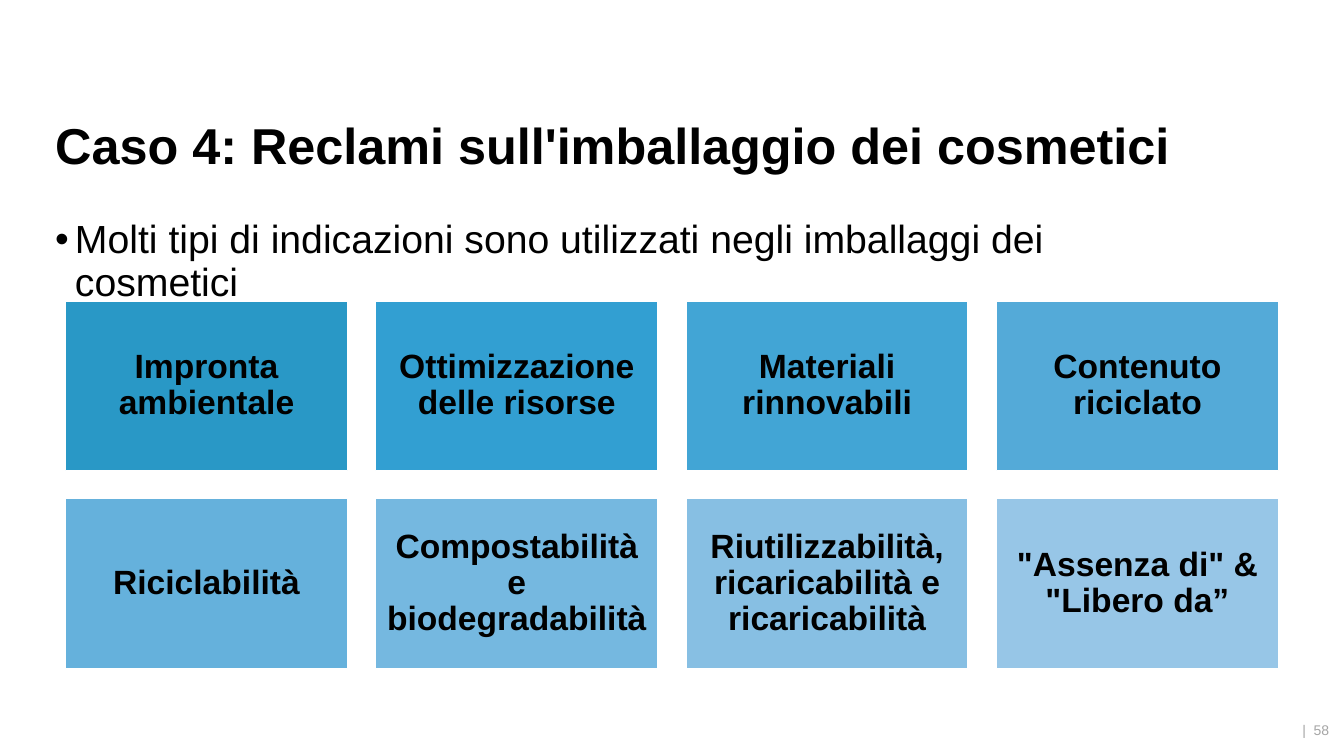
from typing import NamedTuple

from lxml.etree import SubElement
from pptx import Presentation
from pptx.dml.color import RGBColor as Rgb
from pptx.enum.shapes import MSO_SHAPE as Form
from pptx.enum.text import MSO_ANCHOR as Anchor, MSO_AUTO_SIZE as Fit, PP_ALIGN as Align
from pptx.oxml.ns import qn
from pptx.util import Cm, Pt

HUES = {
    "ink": "000000",
    "edge": "FFFFFF",
    "page": "A5A5A5",
    "foot": "2998C6",
    "save": "329FD2",
    "renew": "42A5D5",
    "reuse": "54AAD8",
    "cycle": "65B1DC",
    "rot": "75B8E0",
    "refill": "87BFE3",
    "free": "97C6E7",
}


class Claim(NamedTuple):
    text: str
    hue: str


CLAIMS = [
    Claim("Impronta ambientale", "foot"),
    Claim("Ottimizzazione delle risorse", "save"),
    Claim("Materiali rinnovabili", "renew"),
    Claim("Contenuto riciclato", "reuse"),
    Claim("Riciclabilità", "cycle"),
    Claim("Compostabilità e biodegradabilità", "rot"),
    Claim("Riutilizzabilità, ricaricabilità e ricaricabilità", "refill"),
    Claim("\"Assenza di\" & \"Libero da”", "free"),
]
COLS = 4
LEFT, TOP = 1.65, 7.59
WIDE, HIGH, GAP = 7.11, 4.27, 0.71


def tint(name: str) -> Rgb:
    return Rgb.from_string(HUES[name])


def place(shape, left: float, top: float, wide: float, high: float) -> None:
    shape.left, shape.top = Cm(left), Cm(top)
    shape.width, shape.height = Cm(wide), Cm(high)


def write(shape, text: str, *, size: float, hue: str = "ink", bold: bool = False,
          align=Align.LEFT, anchor=Anchor.TOP, space: float = 0.9,
          pads: tuple = (0.25, 0.13, 0.25, 0.13), bullet: str = "") -> None:
    frame = shape.text_frame
    frame.word_wrap = True
    frame.auto_size = Fit.NONE
    frame.vertical_anchor = anchor
    (frame.margin_left, frame.margin_top,
     frame.margin_right, frame.margin_bottom) = map(Cm, pads)
    frame.text = text
    para = frame.paragraphs[0]
    para.alignment = align
    para.line_spacing = space
    para.space_before = Pt(0)
    if bullet:
        props = para._p.get_or_add_pPr()
        props.set("marL", str(Cm(0.5)))
        props.set("indent", str(Cm(-0.5)))
        SubElement(props, qn("a:buFont"), typeface="Arial")
        SubElement(props, qn("a:buChar"), char=bullet)
    font = para.runs[0].font
    font.name = "Arial"
    font.size = Pt(size)
    font.bold = bold
    font.color.rgb = tint(hue)


def draw(slide, claim: Claim, spot: int) -> None:
    row, col = divmod(spot, COLS)
    tile = slide.shapes.add_shape(
        Form.RECTANGLE,
        Cm(LEFT + col * (WIDE + GAP)), Cm(TOP + row * (HIGH + GAP)),
        Cm(WIDE), Cm(HIGH))
    tile.shadow.inherit = False
    tile.fill.solid()
    tile.fill.fore_color.rgb = tint(claim.hue)
    tile.line.color.rgb = tint("edge")
    tile.line.width = Pt(1)
    write(tile, claim.text, size=24, bold=True, align=Align.CENTER,
          anchor=Anchor.MIDDLE, pads=(0.25,) * 4)


def main() -> None:
    deck = Presentation()
    deck.slide_width, deck.slide_height = Cm(33.87), Cm(19.05)
    slide = deck.slides.add_slide(deck.slide_layouts[1])

    title = slide.shapes.title
    place(title, 1.14, 2.84, 29.21, 1.8)
    write(title, "Caso 4: Reclami sull'imballaggio dei cosmetici",
          size=36, bold=True, anchor=Anchor.MIDDLE)

    body = slide.placeholders[1]
    place(body, 1.14, 5.41, 29.21, 1.4)
    write(body, "Molti tipi di indicazioni sono utilizzati negli imballaggi dei cosmetici",
          size=28, bullet="•")

    page = slide.shapes.add_textbox(Cm(32.82), Cm(18.03), Cm(1.05), Cm(0.71))
    write(page, "|  58", size=10, hue="page", anchor=Anchor.BOTTOM,
          space=1.0, pads=(0, 0.13, 0.25, 0.13))

    for spot, claim in enumerate(CLAIMS):
        draw(slide, claim, spot)

    deck.save("out.pptx")


if __name__ == "__main__":
    main()
